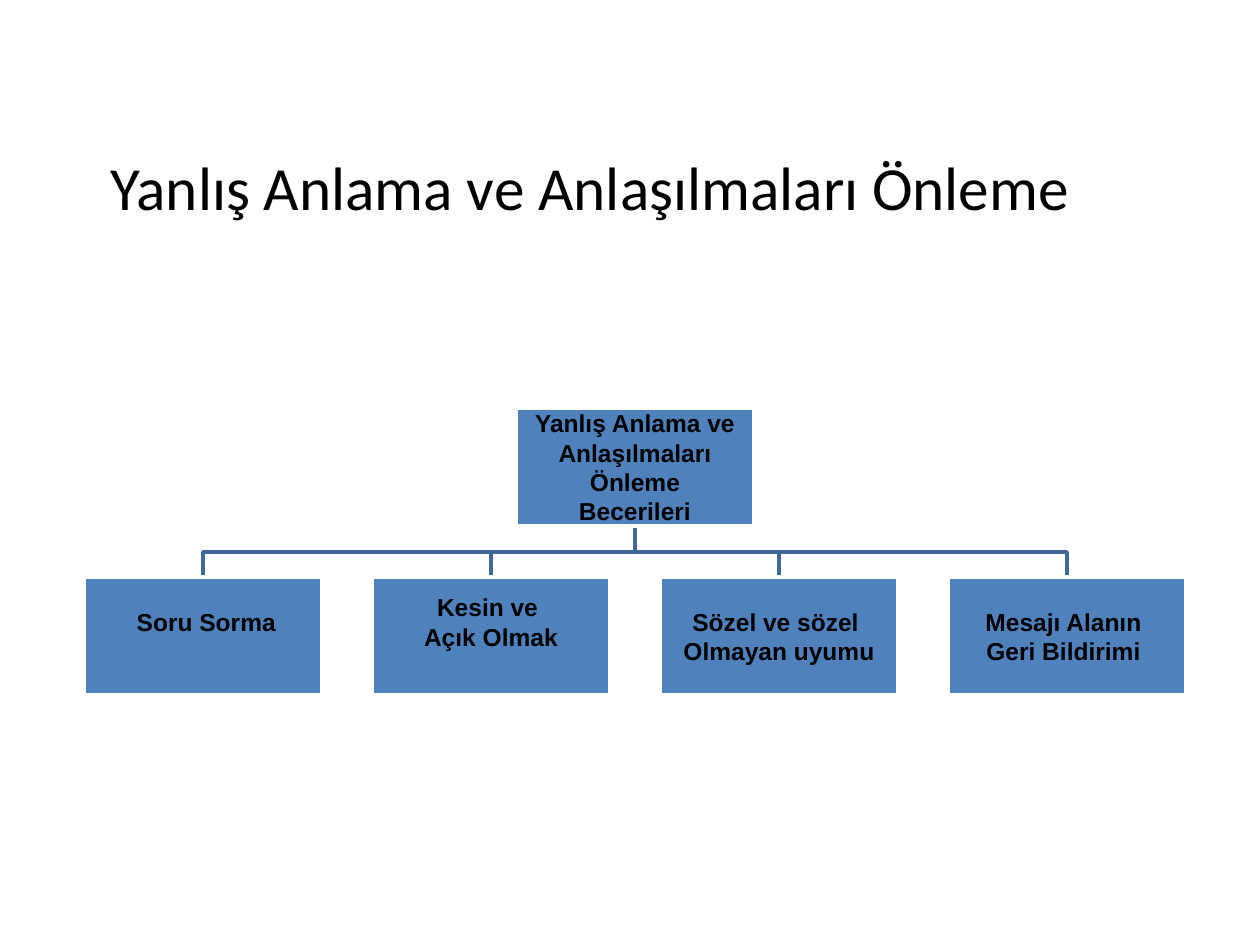
from pptx import Presentation
from pptx.dml.color import RGBColor
from pptx.enum.shapes import MSO_SHAPE
from pptx.enum.text import MSO_ANCHOR, MSO_AUTO_SIZE, PP_ALIGN
from pptx.util import Pt

PX = 914400 / 126

BLACK = RGBColor(0x00, 0x00, 0x00)
WHITE = RGBColor(0xFF, 0xFF, 0xFF)
BOX_BLUE = RGBColor(0x4F, 0x81, 0xBD)
BRANCH_BLUE = RGBColor(0x3F, 0x67, 0x97)

BOX_WIDTH, BOX_HEIGHT = 238, 118
FIRST_LEFT, PITCH = 84, 288
ROOT_TOP, SKILL_TOP = 408, 577
INSET, TEXT_LINE = 1, 29

TITLE = "Yanlış Anlama ve Anlaşılmaları Önleme"
ROOT_LINES = [TITLE, "Becerileri"]
# Lines of each skill, and how many text lines of room stay free below them
SKILLS = [
    ([" Soru Sorma"], 1),
    (["Kesin ve ", "Açık Olmak"], 1),
    (["Sözel ve sözel ", "Olmayan uyumu"], 0),
    (["Mesajı Alanın ", "Geri Bildirimi "], 0),
]

TITLE_FONT = {"name": "Calibri", "size": Pt(35), "bold": False}
BOX_FONT = {"name": "Arial", "size": Pt(14), "bold": True}


def px(length):
    return round(length * PX)


def set_all(target, values):
    for name, value in values.items():
        setattr(target, name, value)


def write_lines(frame, lines, font_format):
    """Fill a text frame with one centred paragraph per line."""
    set_all(frame, {"word_wrap": True, "auto_size": MSO_AUTO_SIZE.NONE,
                    "vertical_anchor": MSO_ANCHOR.MIDDLE})
    frame.text = "\n".join(lines)
    for paragraph in frame.paragraphs:
        paragraph.alignment = PP_ALIGN.CENTER
        for run in paragraph.runs:
            set_all(run.font, font_format)
            run.font.color.rgb = BLACK


def style_line(shape, color):
    shape.shadow.inherit = False
    shape.line.color.rgb = color
    shape.line.width = Pt(2)


def add_title(slide):
    title = slide.shapes.title
    set_all(title, {"left": px(84), "top": px(106),
                    "width": px(1013), "height": px(160)})
    write_lines(title.text_frame, [TITLE], TITLE_FONT)


def add_branch(slide, root_x, skill_x):
    """Draw the bent line from the root box down to one skill box."""
    start_y = ROOT_TOP + BOX_HEIGHT
    middle_y = (start_y + SKILL_TOP) / 2
    builder = slide.shapes.build_freeform(root_x, start_y, scale=PX)
    builder.add_line_segments(
        [(root_x, middle_y), (skill_x, middle_y), (skill_x, SKILL_TOP)],
        close=False)
    branch = builder.convert_to_shape()
    branch.fill.background()
    style_line(branch, BRANCH_BLUE)


def add_box(slide, left, top, lines, free_lines=0):
    box = slide.shapes.add_shape(MSO_SHAPE.RECTANGLE, px(left), px(top),
                                 px(BOX_WIDTH), px(BOX_HEIGHT))
    box.fill.solid()
    box.fill.fore_color.rgb = BOX_BLUE
    style_line(box, WHITE)
    set_all(box.text_frame, {
        "margin_left": px(INSET), "margin_right": px(INSET),
        "margin_top": px(INSET),
        "margin_bottom": px(INSET + free_lines * TEXT_LINE)})
    write_lines(box.text_frame, lines, BOX_FONT)


def main():
    deck = Presentation()
    set_all(deck, {"slide_width": px(1260), "slide_height": px(945)})
    slide = deck.slides.add_slide(deck.slide_layouts[5])
    add_title(slide)

    skill_lefts = [FIRST_LEFT + PITCH * i for i in range(len(SKILLS))]
    root_left = (skill_lefts[0] + skill_lefts[-1]) / 2
    half = BOX_WIDTH / 2
    for left in reversed(skill_lefts):
        add_branch(slide, root_left + half, left + half)
    add_box(slide, root_left, ROOT_TOP, ROOT_LINES)
    for left, (lines, free_lines) in zip(skill_lefts, SKILLS):
        add_box(slide, left, SKILL_TOP, lines, free_lines)

    deck.save("out.pptx")


if __name__ == "__main__":
    main()
